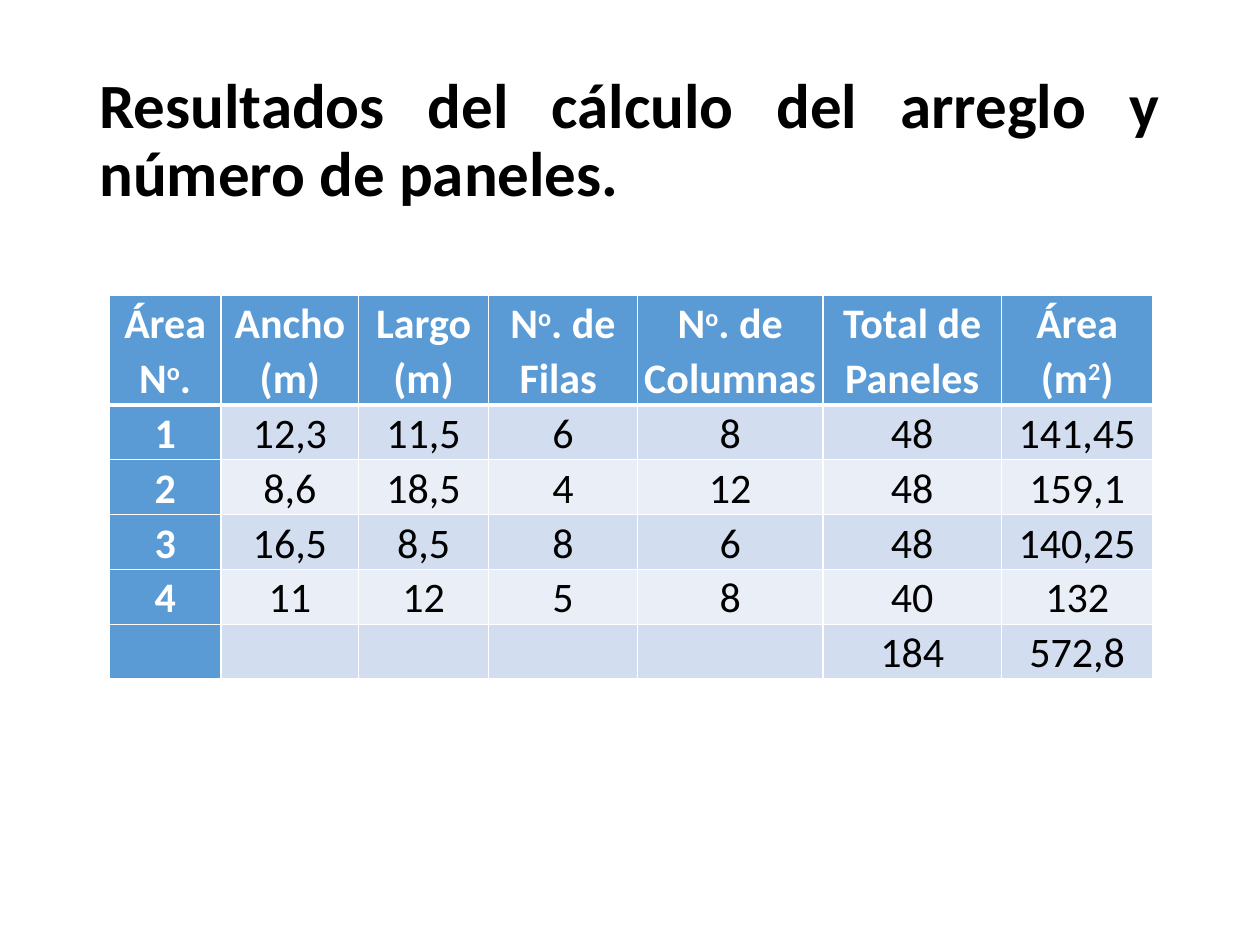
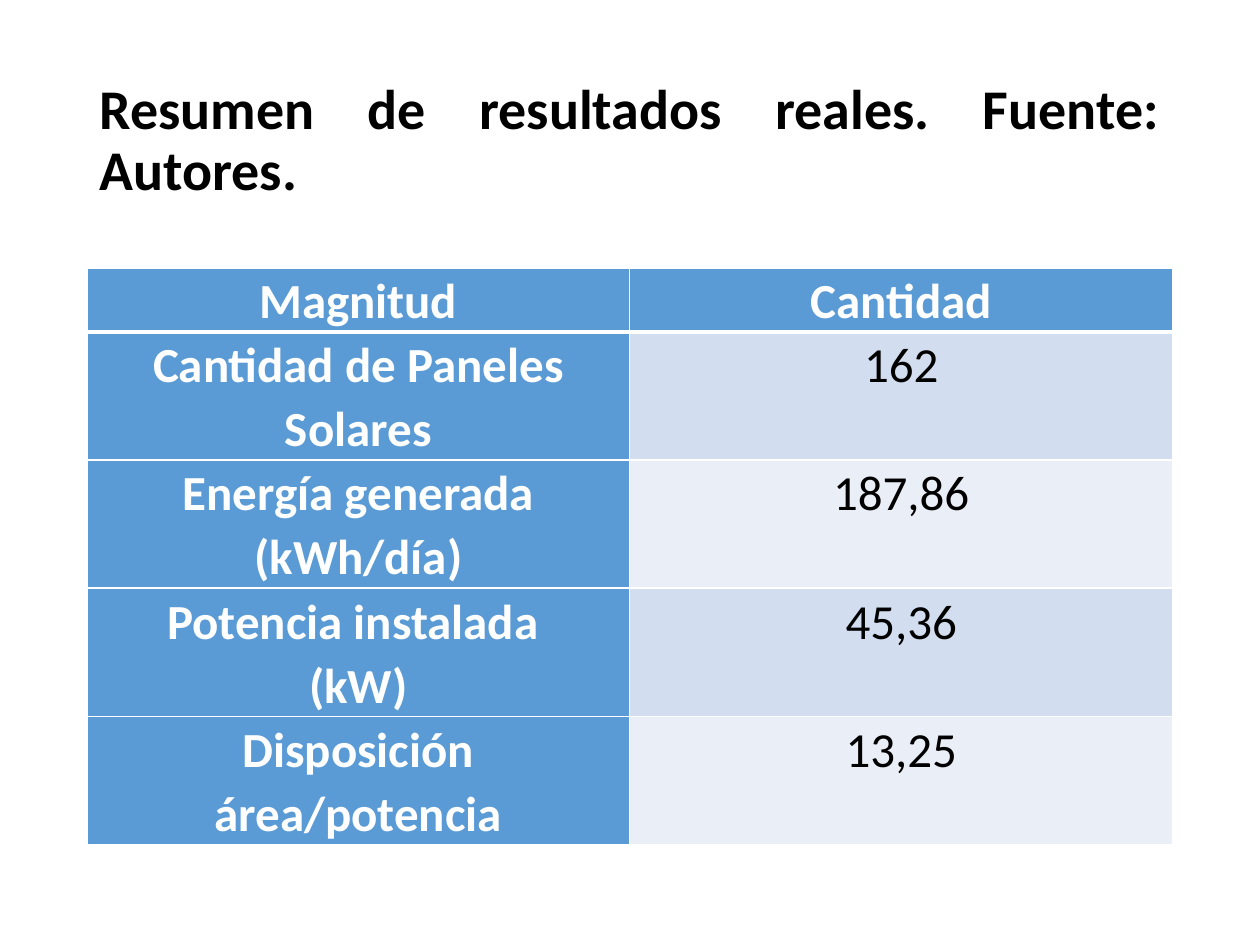
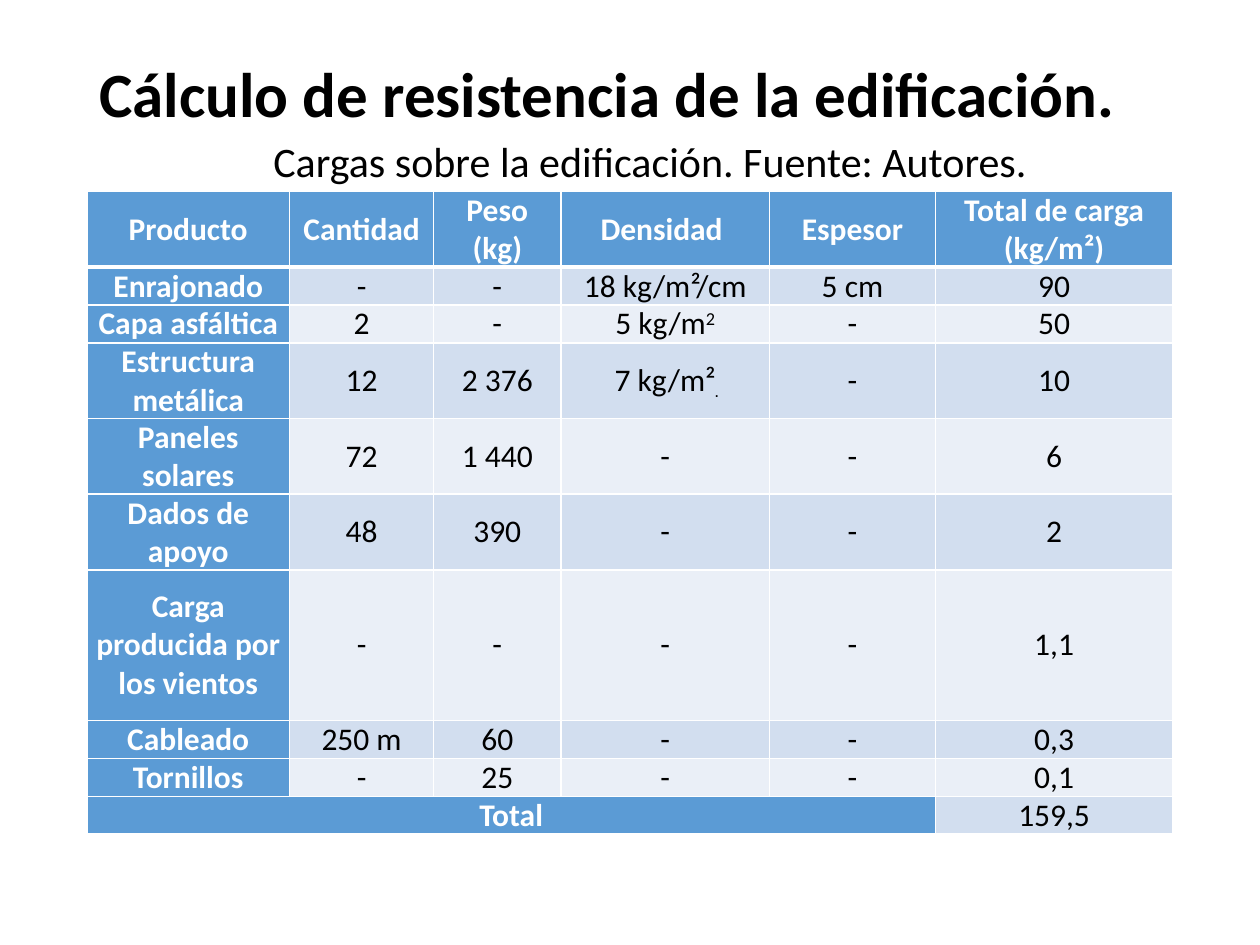
from lxml.etree import SubElement
from pptx import Presentation
from pptx.dml.color import RGBColor
from pptx.enum.text import MSO_ANCHOR, MSO_AUTO_SIZE, PP_ALIGN
from pptx.oxml.ns import qn
from pptx.util import Cm, Pt

HUES = {"head": "5B9BD5", "odd": "D2DEEF", "even": "EAEFF7",
        "white": "FFFFFF", "black": "000000"}
LEFT, WIDE = 1.75, 21.89


class Deck:
    def __init__(self):
        self.prs = Presentation()
        self.prs.slide_width, self.prs.slide_height = Cm(25.4), Cm(19.05)

    def put(self, frame, text, size, hue="black", bold=False,
            align=PP_ALIGN.CENTER, space=None, face="Calibri"):
        """Fill a frame; text between carets is raised."""
        for i, line in enumerate(text.split("\n")):
            para = frame.add_paragraph() if i else frame.paragraphs[0]
            para.alignment, para.line_spacing = align, space
            for j, part in enumerate(line.split("^")):
                if not part:
                    continue
                run = para.add_run()
                run.text = part
                font = run.font
                font.name, font.size, font.bold = face, Pt(size), bold
                font.color.rgb = RGBColor.from_string(HUES[hue])
                if j % 2:
                    run._r.get_or_add_rPr().set("baseline", "30000")

    def place(self, shape, box):
        shape.left, shape.top, shape.width, shape.height = map(Cm, box)

    def title(self, text, size, top=1.02, high=3.68, align=PP_ALIGN.JUSTIFY):
        """Start a slide with its title."""
        self.slide = self.prs.slides.add_slide(self.prs.slide_layouts[5])
        shape = self.slide.shapes.title
        self.place(shape, (LEFT, top, WIDE, high))
        frame = shape.text_frame
        frame.auto_size = MSO_AUTO_SIZE.NONE
        frame.vertical_anchor = MSO_ANCHOR.MIDDLE
        self.put(frame, text, size, bold=True, align=align, space=0.9)

    def label(self, text, size, box, wrap=True, anchor=MSO_ANCHOR.TOP, **style):
        frame = self.slide.shapes.add_textbox(*map(Cm, box)).text_frame
        frame.word_wrap, frame.vertical_anchor = wrap, anchor
        self.put(frame, text, size, **style)

    def edge(self, cell, row):
        """Draw white cell borders, thick under the header row."""
        props = cell._tc.get_or_add_tcPr()
        thick = {(0, "B"), (1, "T")}
        for side in "LRTB":
            width = Pt(3 if (row, side) in thick else 1)
            line = SubElement(props, qn(f"a:ln{side}"), w=str(width))
            fill = SubElement(line, qn("a:solidFill"))
            SubElement(fill, qn("a:srgbClr"), val=HUES["white"])

    def table(self, data, left, top, cols, rows, size, pad=0.18,
              anchor=MSO_ANCHOR.TOP, space=None):
        grid = self.slide.shapes.add_table(
            len(rows), len(cols), Cm(left), Cm(top),
            Cm(sum(cols)), Cm(sum(rows))).table
        grid.first_col = True
        for col, width in zip(grid.columns, cols):
            col.width = Cm(width)
        for row, high in zip(grid.rows, rows):
            row.height = Cm(high)
        for r, line in enumerate(data):
            for c, text in enumerate(line):
                cell = grid.cell(r, c)
                head = r == 0 or c == 0
                cell.margin_left = cell.margin_right = Cm(pad)
                cell.margin_top = cell.margin_bottom = 0
                cell.vertical_anchor = anchor
                self.edge(cell, r)
                hue = "head" if head else "odd" if r % 2 else "even"
                cell.fill.solid()
                cell.fill.fore_color.rgb = RGBColor.from_string(HUES[hue])
                self.put(cell.text_frame, text, size,
                         "white" if head else "black", head, space=space)
        return grid


def panels(deck):
    deck.title("Resultados del cálculo del arreglo y número de paneles.", 36)
    data = [
        ["Área N^o^.", "Ancho (m)", "Largo (m)", "N^o^. de Filas ",
         "N^o^. de Columnas ", "Total de Paneles", "Área (m^2^)"],
        ["1", "12,3", "11,5", "6", "8", "48", "141,45"],
        ["2", "8,6", "18,5", "4", "12", "48", "159,1"],
        ["3", "16,5", "8,5", "8", "6", "48", "140,25"],
        ["4", "11", "12", "5", "8", "40", "132"],
        ["", "", "", "", "", "184", "572,8"],
    ]
    deck.table(data, 2.2, 5.95, [2.26, 2.77, 2.62, 3, 3.74, 3.6, 3.05],
               [2.2] + [1.1] * 5, 24, pad=0.12,
               anchor=MSO_ANCHOR.BOTTOM, space=1.07)


def summary(deck):
    deck.title("Resumen de resultados reales. Fuente: Autores.", 32)
    data = [
        ["Magnitud", "Cantidad"],
        ["Cantidad de Paneles Solares", "162"],
        ["Energía generada (kWh/día)", "187,86"],
        ["Potencia instalada \n(kW)", "45,36"],
        ["Disposición área/potencia", "13,25"],
    ]
    deck.table(data, LEFT, 5.4, [WIDE / 2] * 2, [1.29] + [2.58] * 4, 28,
               space=1.07)


def loads(deck):
    deck.title("Cálculo de resistencia de la edificación.", 36, 0.91, 2.11,
               PP_ALIGN.LEFT)
    deck.label("Cargas sobre la edificación. Fuente: Autores.", 24,
               (2.16, 2.6, WIDE, 1.27))
    data = [
        ["Producto", "Cantidad", "Peso (kg)", "Densidad ", "Espesor",
         "Total de carga (kg/m²)"],
        ["Enrajonado", "-", "-", "18 kg/m²/cm", "5 cm", "90"],
        ["Capa asfáltica", "2", "-", "5 kg/m^2^", "-", "50"],
        ["Estructura metálica", "12", "2 376", "7 kg/m²", "-", "10"],
        ["Paneles solares", "72", "1 440", "-", "-", "6"],
        ["Dados de apoyo", "48", "390", "-", "-", "2"],
        ["Carga producida por los vientos", "-", "-", "-", "-", "1,1"],
        ["Cableado", "250 m", "60", "-", "-", "0,3"],
        ["Tornillos", "-", "25", "-", "-", "0,1"],
        ["Total", "", "", "", "", "159,5"],
    ]
    lines = [2, 1, 1, 2, 2, 2, 4, 1, 1, 1]
    grid = deck.table(data, LEFT, 3.86, [4.09, 2.9, 2.57, 4.2, 3.35, 4.78],
                      [0.76 * n for n in lines], 18, anchor=MSO_ANCHOR.MIDDLE)
    grid.cell(9, 0).merge(grid.cell(9, 4))
    deck.label(".", 10, (14.15, 7.54, 0.6, 0.68), wrap=False,
               anchor=MSO_ANCHOR.MIDDLE, align=PP_ALIGN.JUSTIFY, face="Arial")


def main():
    deck = Deck()
    for build in (panels, summary, loads):
        build(deck)
    deck.prs.save("out.pptx")


if __name__ == "__main__":
    main()
